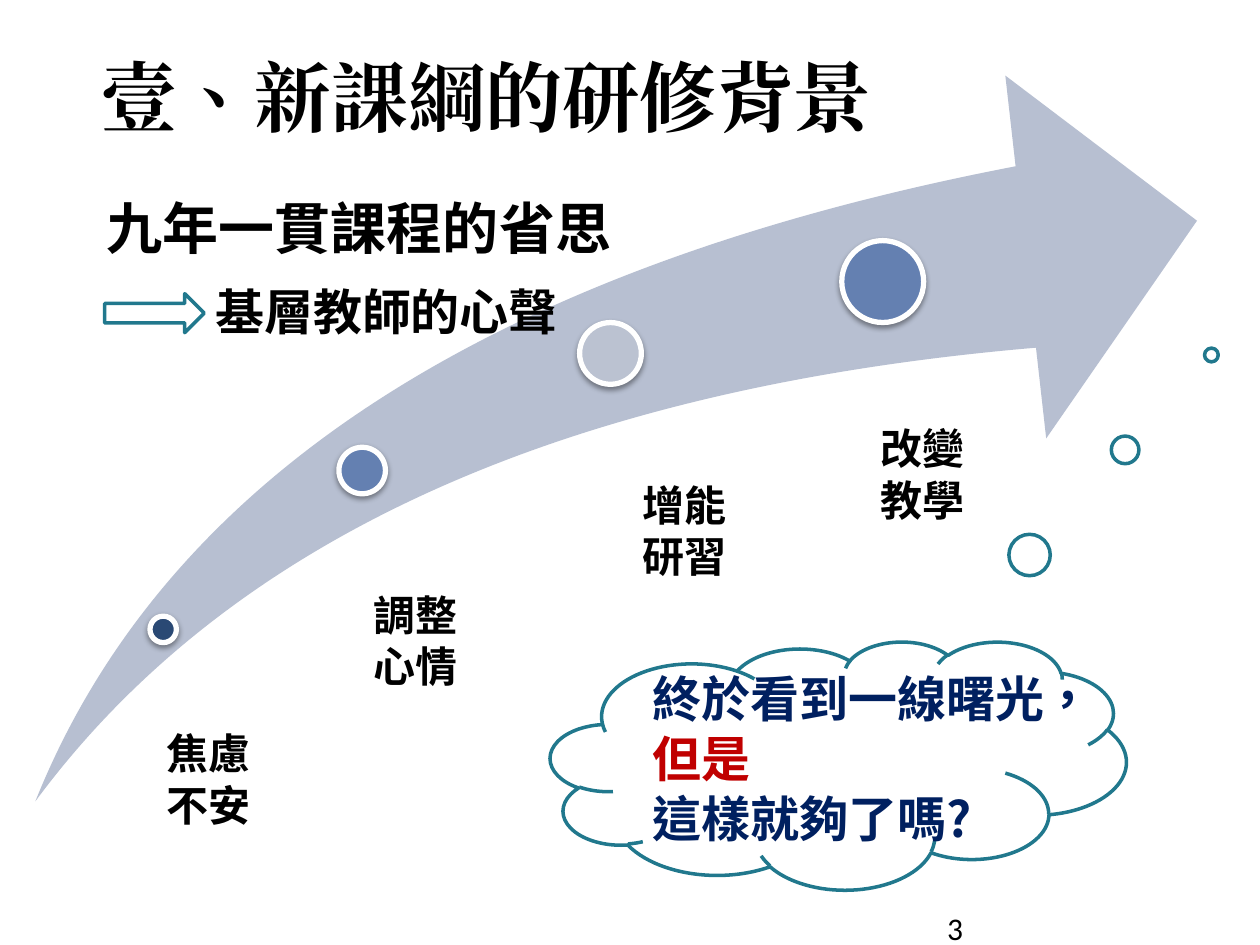
from lxml import etree
from pptx import Presentation
from pptx.dml.color import RGBColor
from pptx.enum.lang import MSO_LANGUAGE_ID
from pptx.enum.shapes import MSO_SHAPE
from pptx.enum.text import MSO_ANCHOR, MSO_AUTO_SIZE, PP_ALIGN
from pptx.oxml.ns import qn
from pptx.util import Pt

SWOOSH = MSO_SHAPE.SWOOSH_ARROW
OVAL = MSO_SHAPE.OVAL
RIGHT_ARROW = MSO_SHAPE.RIGHT_ARROW
CLOUD = MSO_SHAPE.CLOUD_CALLOUT
CENTER = PP_ALIGN.CENTER
MIDDLE = MSO_ANCHOR.MIDDLE
FIT_SHAPE = MSO_AUTO_SIZE.SHAPE_TO_FIT_TEXT
ZH_TW = MSO_LANGUAGE_ID.TRADITIONAL_CHINESE

SANS = "Noto Sans CJK SC"
SERIF = "Times New Roman"
BLACK, WHITE, TEAL, NAVY, RED = "000000", "FFFFFF", "21788D", "002060", "C00000"
LINE_FACTOR = 1.22

# Milestones along the arrow: circle (left, top, diameter, fill)
MILESTONES = [
    (85.7, 352.1, 15.1, "2A4974"),
    (193.7, 255.6, 26.6, "6480B1"),
    (331.2, 184.3, 35.3, "BBC2D1"),
    (481, 137.5, 46.8, "6480B1"),
]
# Milestone labels: left, top, width, lines
LABELS = [
    (87.8, 411.8, 63.4, ("焦慮", "不安")),
    (206.6, 332.6, 89.3, ("調整", "心情")),
    (360, 270, 85, ("增能", "研習")),
    (496.1, 237.6, 80.6, ("改變", "教學")),
]


def color(hex_code):
    return RGBColor.from_string(hex_code)


def add_figure(slide, preset, box, fill=None, line=None, width=2, adjust=()):
    figure = slide.shapes.add_shape(preset, *map(Pt, box))
    figure.shadow.inherit = False
    if fill:
        figure.fill.solid()
        figure.fill.fore_color.rgb = color(fill)
    else:
        figure.fill.background()
    if line:
        figure.line.color.rgb = color(line)
        figure.line.width = Pt(width)
    else:
        figure.line.fill.background()
    for index, value in enumerate(adjust):
        figure.adjustments[index] = value
    return figure


def add_drop_shadow(figure):
    effects = figure._element.spPr.find(qn("a:effectLst"))
    shadow = etree.SubElement(effects, qn("a:outerShdw"), blurRad=str(Pt(3.1)),
                              dist=str(Pt(1.6)), dir="5400000", rotWithShape="0")
    tint = etree.SubElement(shadow, qn("a:srgbClr"), val=BLACK)
    etree.SubElement(tint, qn("a:alpha"), val="38000")


def add_text(slide, box, lines, size, font=SANS, bold=True, wrap=True):
    """Add a text box; lines holds one (text, colour) pair per paragraph."""
    text_box = slide.shapes.add_textbox(*map(Pt, box))
    frame = text_box.text_frame
    frame.word_wrap = wrap
    for index, (text, hex_code) in enumerate(lines):
        paragraph = frame.paragraphs[0] if index == 0 else frame.add_paragraph()
        run = paragraph.add_run()
        run.text = text
        run.font.size = Pt(size)
        run.font.bold = bold
        run.font.name = font
        run.font.color.rgb = color(hex_code)
        run.font.language_id = ZH_TW
        east_asian = etree.Element(qn("a:ea"), typeface=font)
        run.font._element.find(qn("a:latin")).addnext(east_asian)
        if font == SANS:
            paragraph.line_spacing = Pt(round(size * LINE_FACTOR, 1))
            frame.auto_size = FIT_SHAPE
    return frame


def add_title(slide):
    frame = add_text(slide, (31, 20.9, 486, 67.7),
                     [("壹、新課綱的研修背景", BLACK)], 44, SERIF)
    frame.vertical_anchor = MIDDLE
    frame.margin_left = Pt(14.4)
    frame.paragraphs[0].alignment = CENTER


def add_journey(slide):
    add_figure(slide, SWOOSH, (20.2, 43.2, 663.8, 414.7), fill="B7BFD1",
               adjust=(0.25, 0.25))
    for left, top, diameter, fill in MILESTONES:
        circle = add_figure(slide, OVAL, (left, top, diameter, diameter),
                            fill, WHITE, 3)
        add_drop_shadow(circle)
    for left, top, width, words in LABELS:
        add_text(slide, (left, top, width, 65.5),
                 [(word, BLACK) for word in words], 24)


def add_headings(slide):
    add_text(slide, (54, 106.6, 305.3, 46.1),
             [("九年一貫課程的省思", BLACK)], 32, wrap=False)
    add_figure(slide, RIGHT_ARROW, (59.8, 167.8, 56.9, 22.3), line=TEAL)
    add_text(slide, (115.9, 157, 210.2, 41),
             [("基層教師的心聲", BLACK)], 28, wrap=False)


def add_thought(slide):
    add_figure(slide, CLOUD, (314.6, 366.5, 329, 141.8), line=TEAL,
               adjust=(0.648, -1.654))
    add_text(slide, (365.8, 378, 291.6, 108.7),
             [("終於看到一線曙光，", NAVY), ("但是", RED),
              ("這樣就夠了嗎?", NAVY)], 28)


def main():
    deck = Presentation()
    deck.slide_width, deck.slide_height = Pt(720), Pt(540)
    slide = deck.slides.add_slide(deck.slide_layouts[6])
    add_title(slide)
    add_journey(slide)
    add_headings(slide)
    add_thought(slide)
    # Page number
    add_text(slide, (534.2, 516.2, 167.8, 19.4), [("3", BLACK)], 18,
             "Calibri", bold=False)
    deck.save("out.pptx")


if __name__ == "__main__":
    main()
